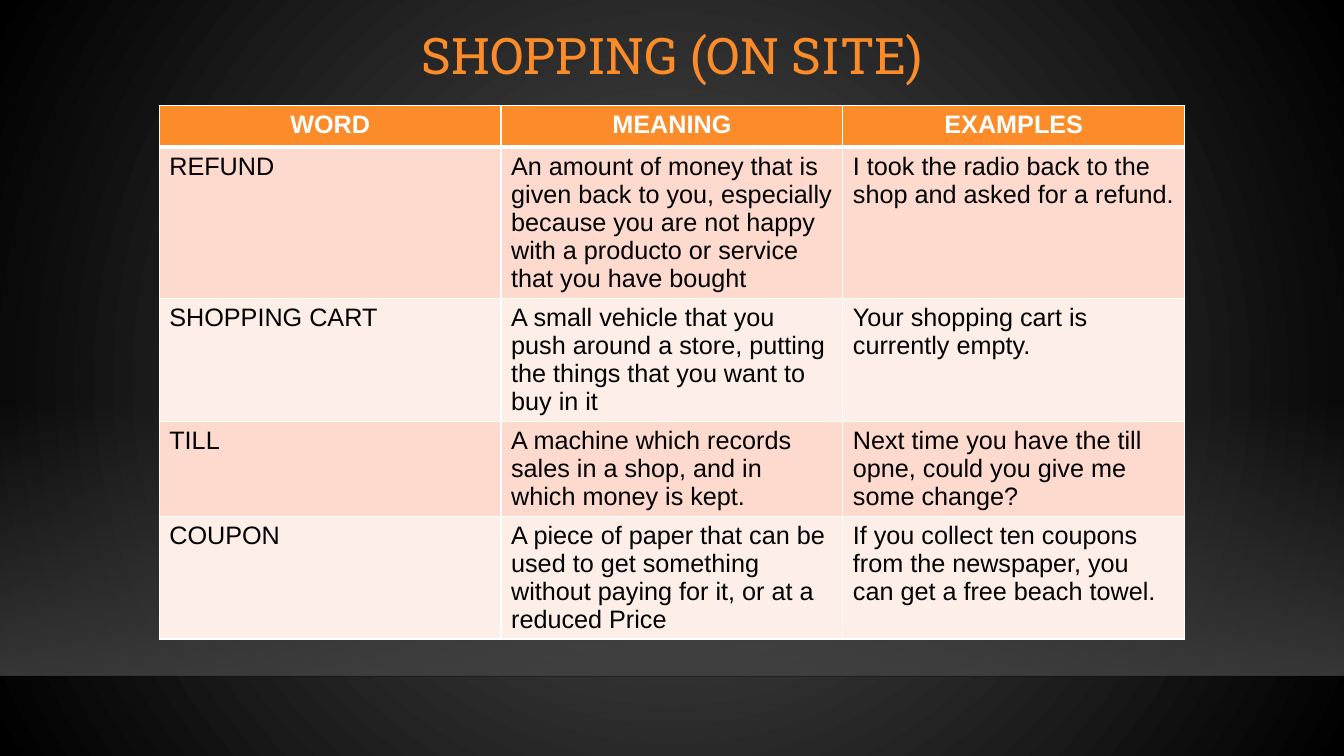
import pptx
import pptx.dml.color
import pptx.enum.shapes
import pptx.enum.text
import pptx.oxml
import pptx.oxml.ns
import pptx.util
from lxml import etree

Inches = pptx.util.Inches
qn = pptx.oxml.ns.qn
NAMESPACE = pptx.oxml.ns.nsdecls("a")
ALIGN = pptx.enum.text.PP_ALIGN
WHITE = "FFFFFF"
ORANGE = "FB8C29"
ROW_FILLS = ["FDDACD", "FEEEE8"]


def color(value):
    return pptx.dml.color.RGBColor.from_string(value)


def write(frame, text, size=18, font="Arial", fill="000000", bold=False,
          align=ALIGN.LEFT, spacing=1.0):
    para = frame.paragraphs[0]
    para.alignment = align
    para.line_spacing = spacing
    span = para.add_run()
    span.text = text
    span.font.size = pptx.util.Pt(size)
    span.font.name = font
    span.font.bold = bold
    span.font.color.rgb = color(fill)


deck = pptx.Presentation()
deck.slide_width = Inches(13.33)
deck.slide_height = Inches(7.5)
page = deck.slides.add_slide(deck.slide_layouts[5])

backdrop = page.background.fill
backdrop.gradient()
for stop, shade in zip(backdrop.gradient_stops, ["505050", "000000"]):
    stop.color.rgb = color(shade)
backdrop_gradient = page.element.find(".//" + qn("a:gradFill"))
backdrop_gradient.replace(
    backdrop_gradient.find(qn("a:lin")),
    pptx.oxml.parse_xml(
        f'<a:path {NAMESPACE} path="circle">'
        '<a:fillToRect l="50000" t="50000" r="50000" b="50000"/></a:path>'
    ),
)

floor = page.shapes.add_shape(
    pptx.enum.shapes.MSO_SHAPE.RECTANGLE,
    Inches(0), Inches(3.96), Inches(13.33), Inches(2.74),
)
floor.shadow.inherit = False
floor.line.fill.background()
floor.fill.gradient()
floor.fill.gradient_angle = 270
for stop in floor.fill.gradient_stops:
    stop.color.rgb = color("454545")

horizon = page.shapes.add_connector(
    pptx.enum.shapes.MSO_CONNECTOR.STRAIGHT,
    Inches(0), Inches(6.71), Inches(13.33), Inches(6.71),
)
horizon.line.color.rgb = color("000001")
horizon.line.width = pptx.util.Pt(1)
horizon_properties = horizon.element.find(qn("p:spPr"))
etree.SubElement(horizon_properties, qn("a:effectLst"))

tints = list(floor.element.find(qn("p:spPr")).iter(qn("a:srgbClr")))
tints += horizon_properties.iter(qn("a:srgbClr"))
for tint, opacity in zip(tints, [0, 80, 20]):
    etree.SubElement(tint, qn("a:alpha")).set("val", str(opacity * 1000))

title = page.shapes.title
title.element.getparent().append(title.element)
title.left, title.top = Inches(1.59), Inches(0)
title.width, title.height = Inches(10.16), Inches(1.15)
title.text_frame.vertical_anchor = pptx.enum.text.MSO_ANCHOR.MIDDLE
write(title.text_frame, "SHOPPING (ON SITE)", size=36, font="Roboto Slab",
      fill=ORANGE, align=ALIGN.CENTER, spacing=0.9)

vocabulary = [
    ("WORD", "MEANING", "EXAMPLES"),
    ("REFUND",
     "An amount of money that is given back to you, especially because you "
     "are not happy with a producto or service that you have bought",
     "I took the radio back to the shop and asked for a refund."),
    ("SHOPPING CART",
     "A small vehicle that you push around a store, putting the things that "
     "you want to buy in it",
     "Your shopping cart is currently empty."),
    ("TILL",
     "A machine which records sales in a shop, and in which money is kept.",
     "Next time you have the till opne, could you give me some change?"),
    ("COUPON",
     "A piece of paper that can be used to get something without paying for "
     "it, or at a reduced Price",
     "If you collect ten coupons from the newspaper, you can get a free "
     "beach towel."),
]
row_heights = [0.41, 1.5, 1.22, 0.94, 1.22]
table = page.shapes.add_table(
    len(vocabulary), 3, Inches(1.58), Inches(1.05),
    Inches(10.16), Inches(sum(row_heights)),
).table
for column in table.columns:
    column.width = Inches(3.39)

for r, (entry, height) in enumerate(zip(vocabulary, row_heights)):
    table.rows[r].height = Inches(height)
    for c, text in enumerate(entry):
        cell = table.cell(r, c)
        cell.fill.solid()
        if r == 0:
            cell.fill.fore_color.rgb = color(ORANGE)
            write(cell.text_frame, text, fill=WHITE, bold=True,
                  align=ALIGN.CENTER)
        else:
            cell.fill.fore_color.rgb = color(ROW_FILLS[(r - 1) % 2])
            write(cell.text_frame, text)
        properties = cell._tc.get_or_add_tcPr()
        for position, side in enumerate("LRTB"):
            heavy = (r, side) in [(0, "B"), (1, "T")]
            width = pptx.util.Pt(3 if heavy else 1)
            properties.insert(position, pptx.oxml.parse_xml(
                f'<a:ln{side} {NAMESPACE} w="{width}"><a:solidFill>'
                f'<a:srgbClr val="{WHITE}"/></a:solidFill></a:ln{side}>'
            ))

deck.save("out.pptx")
